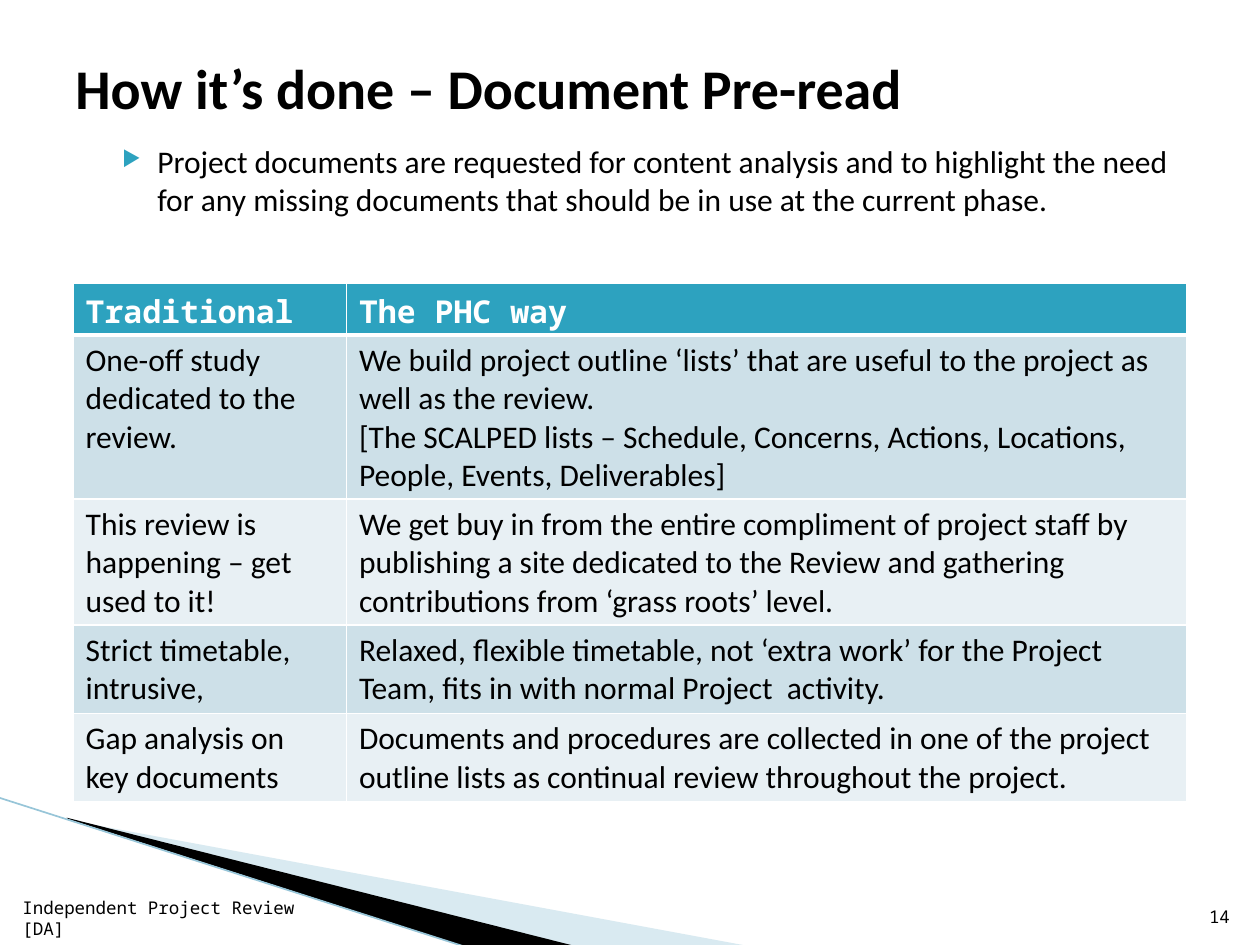
from dataclasses import dataclass

from lxml.etree import SubElement
from pptx import Presentation
from pptx.dml.color import RGBColor
from pptx.enum.shapes import MSO_CONNECTOR
from pptx.enum.text import MSO_ANCHOR, PP_ALIGN
from pptx.oxml.ns import qn
from pptx.slide import Slide
from pptx.table import _Cell
from pptx.text.text import TextFrame
from pptx.util import Inches, Pt

COLORS = {
    "text": "000000",
    "white": "FFFFFF",
    "accent": "2DA2BF",
    "band_dark": "CDE0E8",
    "band_light": "E8F0F4",
    "pale_wedge": "A0CBDC",
    "edge": "97C5D8",
}
SANS = "Calibri"
MONO = "Noto Sans Mono"


@dataclass(frozen=True)
class TextStyle:
    size: float
    font: str
    color: str = "text"
    bold: bool = False
    align: PP_ALIGN = PP_ALIGN.LEFT


@dataclass(frozen=True)
class Label:
    text: str
    left: float
    top: float
    width: float
    height: float
    style: TextStyle
    anchor: MSO_ANCHOR


@dataclass(frozen=True)
class Wedge:
    points: tuple[tuple[float, float], ...]
    color: str
    opacity: int = 100


BODY = TextStyle(18, SANS)
HEADER = TextStyle(18, MONO, "white", bold=True)
SMALL = TextStyle(10, MONO)

TITLE = Label("How it’s done – Document Pre-read", 0.5, 0.3, 9, 0.78,
              TextStyle(32, SANS, bold=True), MSO_ANCHOR.MIDDLE)
INTRO = Label("Project documents are requested for content analysis and to highlight "
              "the need for any missing documents that should be in use at the current phase.",
              0.75, 1.08, 8.75, 0.75, BODY, MSO_ANCHOR.TOP)
PAGE_NUMBER = Label("14", 9.46, 7.01, 0.4, 0.4,
                    TextStyle(10, MONO, align=PP_ALIGN.RIGHT), MSO_ANCHOR.BOTTOM)
FOOTER = Label("Independent Project Review [DA]", 0.08, 7.1, 2.5, 0.4,
               SMALL, MSO_ANCHOR.BOTTOM)

WEDGES = (
    Wedge(((0.55, 6.51), (5.95, 7.51), (4.56, 7.51), (0.55, 6.5)), "pale_wedge", 40),
    Wedge(((0.53, 6.49), (4.57, 7.51), (3.72, 7.52), (0.54, 6.5)), "text"),
)

COLUMN_WIDTHS = (2.17, 6.67)
ROW_HEIGHT = 0.41
ROWS = (
    ("Traditional", "The PHC way"),
    ("One-off study dedicated to the review.",
     "We build project outline ‘lists’ that are useful to the project as well as the review.\n"
     "[The SCALPED lists – Schedule, Concerns, Actions, Locations, People, Events, Deliverables]"),
    ("This review is happening – get used to it!",
     "We get buy in from the entire compliment of project staff by publishing a site dedicated "
     "to the Review and gathering contributions from ‘grass roots’ level."),
    ("Strict timetable, intrusive,",
     "Relaxed, flexible timetable, not ‘extra work’ for the Project Team, "
     "fits in with normal Project  activity."),
    ("Gap analysis on key documents",
     "Documents and procedures are collected in one of the project outline lists "
     "as continual review throughout the project."),
)


def color(name: str) -> RGBColor:
    return RGBColor.from_string(COLORS[name])


def write_text(frame: TextFrame, text: str, style: TextStyle) -> None:
    frame.text = text
    for paragraph in frame.paragraphs:
        paragraph.alignment = style.align
        paragraph.font.size = Pt(style.size)
        paragraph.font.name = style.font
        paragraph.font.bold = style.bold
        paragraph.font.color.rgb = color(style.color)


def add_label(page: Slide, label: Label) -> TextFrame:
    box = page.shapes.add_textbox(Inches(label.left), Inches(label.top),
                                  Inches(label.width), Inches(label.height))
    frame = box.text_frame
    frame.word_wrap = True
    frame.vertical_anchor = label.anchor
    write_text(frame, label.text, label.style)
    return frame


def add_bulleted_label(page: Slide, label: Label) -> None:
    frame = add_label(page, label)
    properties = frame.paragraphs[0]._p.get_or_add_pPr()
    properties.set("marL", str(Inches(0.4)))
    properties.set("indent", str(Inches(-0.28)))
    bullet_color = SubElement(properties, qn("a:buClr"))
    SubElement(bullet_color, qn("a:srgbClr"), val=COLORS["accent"])
    SubElement(properties, qn("a:buSzPct"), val="68000")
    SubElement(properties, qn("a:buChar"), char="▶")
    properties.append(properties.find(qn("a:defRPr")))


def add_wedge(page: Slide, wedge: Wedge) -> None:
    points = [(Inches(x), Inches(y)) for x, y in wedge.points]
    builder = page.shapes.build_freeform(*points[0])
    builder.add_line_segments(points[1:], close=True)
    shape = builder.convert_to_shape()
    shape.shadow.inherit = False
    shape.fill.solid()
    shape.fill.fore_color.rgb = color(wedge.color)
    shape.line.fill.background()
    if wedge.opacity < 100:
        fill_color = shape._element.spPr.find(qn("a:solidFill"))[0]
        SubElement(fill_color, qn("a:alpha"), val=str(wedge.opacity * 1000))


def add_edge(page: Slide) -> None:
    edge = page.shapes.add_connector(MSO_CONNECTOR.STRAIGHT, Inches(-0.01), Inches(6.33),
                                     Inches(3.71), Inches(7.52))
    edge.line.color.rgb = color("edge")
    edge.line.width = Pt(0.95)
    SubElement(edge._element.spPr, qn("a:effectLst"))


def style_cell(cell: _Cell, fill: str, bottom_width: float) -> None:
    properties = cell._tc.get_or_add_tcPr()
    for side, width in (("L", 1), ("R", 1), ("T", 1), ("B", bottom_width)):
        border = SubElement(properties, qn(f"a:ln{side}"), w=str(Pt(width)))
        border_fill = SubElement(border, qn("a:solidFill"))
        SubElement(border_fill, qn("a:srgbClr"), val=COLORS["white"])
    cell.fill.solid()
    cell.fill.fore_color.rgb = color(fill)


def add_comparison_table(page: Slide) -> None:
    holder = page.shapes.add_table(len(ROWS), len(COLUMN_WIDTHS), Inches(0.58), Inches(2.25),
                                   Inches(sum(COLUMN_WIDTHS)), Inches(ROW_HEIGHT * len(ROWS)))
    table = holder.table
    for column, width in zip(table.columns, COLUMN_WIDTHS):
        column.width = Inches(width)
    for row_index, texts in enumerate(ROWS):
        is_header = row_index == 0
        band = "band_dark" if row_index % 2 else "band_light"
        for column_index, text in enumerate(texts):
            cell = table.cell(row_index, column_index)
            write_text(cell.text_frame, text, HEADER if is_header else BODY)
            style_cell(cell, "accent" if is_header else band, 3 if is_header else 1)
    holder.height = Inches(4.11)


def main() -> None:
    deck = Presentation()
    deck.slide_width = Inches(10)
    deck.slide_height = Inches(7.5)
    page = deck.slides.add_slide(deck.slide_layouts[6])
    for wedge in WEDGES:
        add_wedge(page, wedge)
    add_edge(page)
    add_bulleted_label(page, INTRO)
    for label in (TITLE, PAGE_NUMBER, FOOTER):
        add_label(page, label)
    add_comparison_table(page)
    deck.save("out.pptx")


if __name__ == "__main__":
    main()
